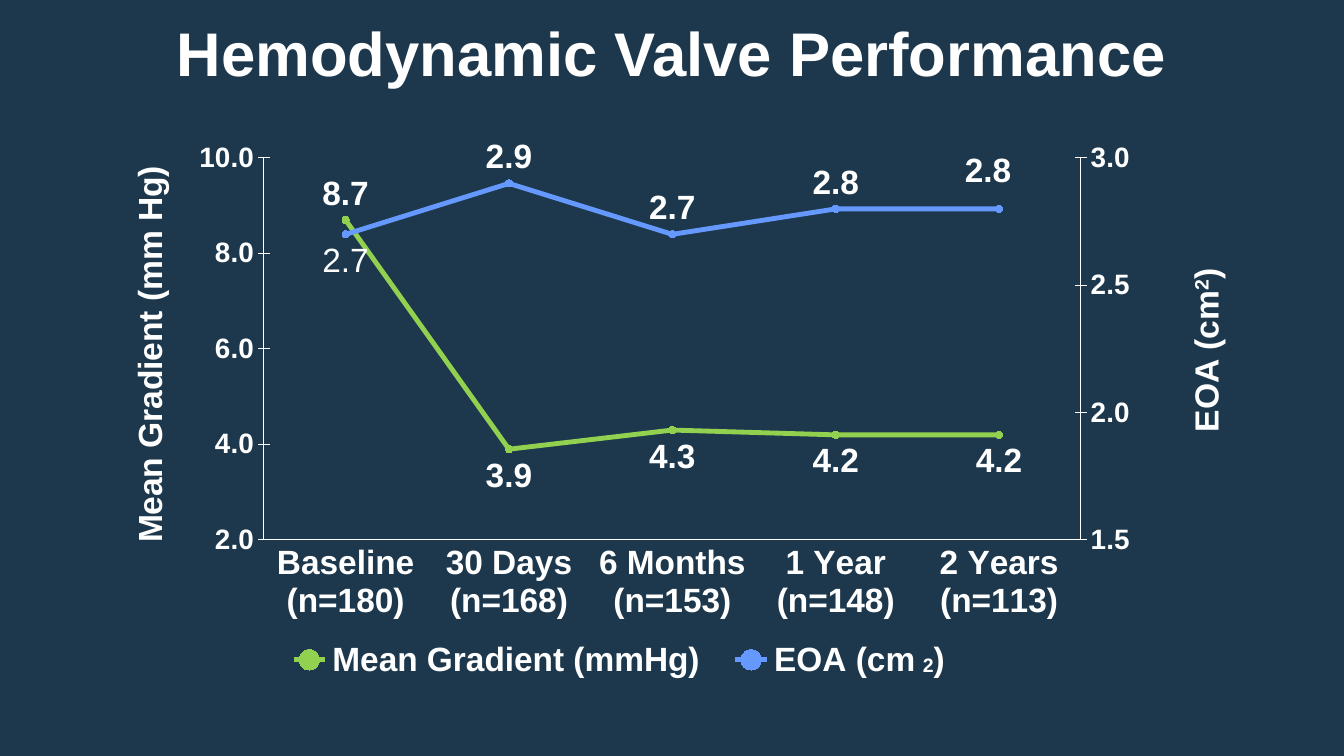
from copy import deepcopy

from lxml import etree
from pptx import Presentation
from pptx import util as u
from pptx.chart.axis import ValueAxis
from pptx.chart.data import CategoryChartData
from pptx.dml.color import RGBColor
from pptx.enum import chart as ch
from pptx.enum import text
from pptx.oxml.ns import qn

PX = 914400 / 100.8
COLORS = {"back": "1D384C", "text": "FFFFFF", "gradient": "92D050", "area": "6699FF"}
CHART = (112, 131, 1119, 558)


def style_font(font, size, bold=True):
    font.name, font.size, font.bold = "Arial", u.Pt(size), bold
    font.color.rgb = RGBColor.from_string(COLORS["text"])


def place(parent, index, target, left, top, width=None, height=None):
    """Give a chart part a manual layout, in slide px."""
    for old in parent.findall(qn("c:layout")):
        parent.remove(old)
    layout = etree.Element(qn("c:layout"))
    manual = etree.SubElement(layout, qn("c:manualLayout"))
    values = [("layoutTarget", target), ("xMode", "edge"), ("yMode", "edge"),
              ("x", (left - CHART[0]) / CHART[2]), ("y", (top - CHART[1]) / CHART[3])]
    if width:
        values += [("w", width / CHART[2]), ("h", height / CHART[3])]
    for tag, value in values:
        if value is not None:
            value = value if isinstance(value, str) else f"{value:.4f}"
            etree.SubElement(manual, qn("c:" + tag)).set("val", value)
    parent.insert(index, layout)


deck = Presentation()
deck.slide_width, deck.slide_height = round(1344 * PX), round(756 * PX)
page = deck.slides.add_slide(deck.slide_layouts[6])
page.background.fill.solid()
page.background.fill.fore_color.rgb = RGBColor.from_string(COLORS["back"])

# Chart with both series
data = CategoryChartData()
data.categories = ["Baseline (n=180)", "30 Days (n=168)", "6 Months (n=153)",
                   "1 Year (n=148)", "2 Years (n=113)"]
data.add_series("Mean Gradient (mmHg)", (8.7, 3.9, 4.3, 4.2, 4.2))
data.add_series("EOA (cm  )", (2.7, 2.9, 2.7, 2.8, 2.8))
frame = page.shapes.add_chart(ch.XL_CHART_TYPE.LINE_MARKERS,
                              *(round(n * PX) for n in CHART), data)
chart = frame.chart
chart.has_title = False
style_font(chart.font, 10)

# Move the second series to its own axes
area = chart._chartSpace.chart.plotArea
left_plot = area.find(qn("c:lineChart"))
right_plot = deepcopy(left_plot)
left_plot.remove(left_plot.findall(qn("c:ser"))[1])
right_plot.remove(right_plot.findall(qn("c:ser"))[0])
left_plot.addnext(right_plot)
cat_axis, val_axis = area.find(qn("c:catAx")), area.find(qn("c:valAx"))
cat_twin, val_twin = deepcopy(cat_axis), deepcopy(val_axis)
val_axis.addnext(val_twin)
val_twin.addnext(cat_twin)
for axis, own, other in ((cat_twin, "5001", "5002"), (val_twin, "5002", "5001")):
    axis.find(qn("c:axId")).set("val", own)
    axis.find(qn("c:crossAx")).set("val", other)
for node, number in zip(right_plot.findall(qn("c:axId")), ("5001", "5002")):
    node.set("val", number)
cat_twin.find(qn("c:delete")).set("val", "1")
val_twin.find(qn("c:axPos")).set("val", "r")
val_twin.find(qn("c:crosses")).set("val", "max")
place(area, 0, "inner", 265, 158, 822, 382)

# Axes
months = chart.category_axis
months.major_tick_mark = ch.XL_TICK_MARK.NONE
style_font(months.tick_labels.font, 24)
scales = [
    (ValueAxis(val_axis), 2, 10, 2, [("Mean Gradient (mm Hg)", 0)], (122, 158)),
    (ValueAxis(val_twin), 1.5, 3, 0.5,
     [("EOA (cm", 0), ("2", 30000), (")", 0)], (1190, 265)),
]
for axis, low, high, step, title, corner in scales:
    axis.minimum_scale, axis.maximum_scale, axis.major_unit = low, high, step
    axis.has_major_gridlines = False
    axis.major_tick_mark = ch.XL_TICK_MARK.CROSS
    axis.tick_labels.number_format = "#,##0.0"
    axis.tick_labels.number_format_is_linked = False
    style_font(axis.tick_labels.font, 20)
    words = axis.axis_title.text_frame
    words._txBody.bodyPr.set("rot", "-5400000")
    words._txBody.bodyPr.set("vert", "horz")
    for part, baseline in title:
        span = words.paragraphs[0].add_run()
        span.text = part
        style_font(span.font, 24)
        if baseline:
            span._r.get_or_add_rPr().set("baseline", str(baseline))
    place(axis.axis_title._element, 1, None, *corner)
for axis in (months, scales[0][0], scales[1][0]):
    axis.format.line.color.rgb = RGBColor.from_string(COLORS["text"])
    axis.format.line.width = u.Pt(0.75)

# Series, markers and labels
ABOVE, BELOW = ch.XL_LABEL_POSITION.ABOVE, ch.XL_LABEL_POSITION.BELOW
looks = [("gradient", [ABOVE] + [BELOW] * 4), ("area", [BELOW] + [ABOVE] * 4)]
for plot, (name, positions) in zip(chart.plots, looks):
    color = RGBColor.from_string(COLORS[name])
    series = plot.series[0]
    series.smooth = False
    series.format.line.color.rgb = color
    series.format.line.width = u.Pt(3.5)
    series.marker.style, series.marker.size = ch.XL_MARKER_STYLE.CIRCLE, 5
    series.marker.format.fill.solid()
    series.marker.format.fill.fore_color.rgb = color
    series.marker.format.line.color.rgb = color
    labels = series.data_labels
    labels.show_value, labels.position = True, BELOW
    style_font(labels.font, 24)
    for leader in labels._element.findall(qn("c:showLeaderLines")):
        leader.set("val", "0")
    for number, position in enumerate(positions):
        label = series.points[number].data_label
        if name == "area" and number == 0:
            span = label.text_frame.paragraphs[0].add_run()
            span.text = "2.7"
            style_font(span.font, 24, False)
        else:
            style_font(label.font, 24)
        label.position = position

# Shift the last area label up and to the left
last = labels._element.findall(qn("c:dLbl"))[-1]
shift = etree.Element(qn("c:layout"))
manual = etree.SubElement(shift, qn("c:manualLayout"))
for tag, value in (("x", "-0.01"), ("y", "-0.02")):
    etree.SubElement(manual, qn("c:" + tag)).set("val", value)
last.insert(1, shift)

# Legend
chart.has_legend = True
chart.legend.position = ch.XL_LEGEND_POSITION.BOTTOM
chart.legend.include_in_layout = False
style_font(chart.legend.font, 24)
place(chart.legend._element, 1, None, 270, 637, 705, 46)

# Title and the raised 2 in the legend
boxes = [
    ("Hemodynamic Valve Performance", 44, (101, 10, 1142, 84), 5, 0),
    ("2", 24, (913, 644, 33, 37), 10, 30000),
]
for words, size, spot, inset, baseline in boxes:
    box = page.shapes.add_textbox(*(round(n * PX) for n in spot))
    body = box.text_frame
    body.word_wrap = not baseline
    body.margin_left = body.margin_right = round(inset * PX)
    body.margin_top = body.margin_bottom = round(5 * PX)
    body.vertical_anchor = text.MSO_ANCHOR.TOP if baseline else text.MSO_ANCHOR.MIDDLE
    para = body.paragraphs[0]
    para.alignment = text.PP_ALIGN.LEFT if baseline else text.PP_ALIGN.CENTER
    span = para.add_run()
    span.text = words
    style_font(span.font, size)
    if baseline:
        span._r.get_or_add_rPr().set("baseline", str(baseline))

deck.save("out.pptx")
